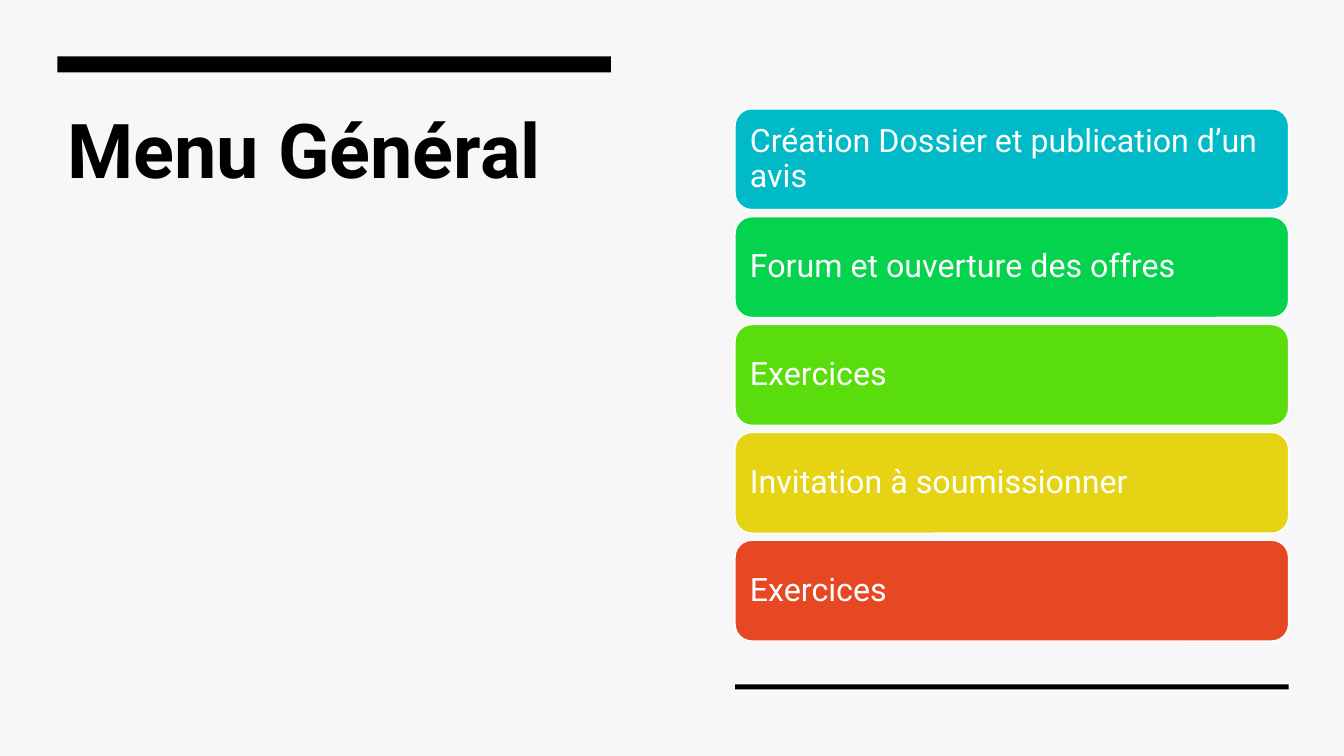
from dataclasses import dataclass

from pptx import Presentation
from pptx.dml.color import RGBColor
from pptx.enum.shapes import MSO_SHAPE
from pptx.enum.text import MSO_ANCHOR, PP_ALIGN
from pptx.shapes.autoshape import Shape
from pptx.slide import Slide
from pptx.text.text import TextFrame
from pptx.util import Inches, Pt

RECT = MSO_SHAPE.RECTANGLE
ROUNDED = MSO_SHAPE.ROUNDED_RECTANGLE
TOP = MSO_ANCHOR.TOP
MIDDLE = MSO_ANCHOR.MIDDLE
LEFT = PP_ALIGN.LEFT

FONT = "Roboto"
BLACK = RGBColor(0x00, 0x00, 0x00)
WHITE = RGBColor(0xFF, 0xFF, 0xFF)
LIGHT_GRAY = RGBColor(0xF7, 0xF7, 0xF7)
CYAN = RGBColor(0x00, 0xBA, 0xC8)
GREEN = RGBColor(0x06, 0xD3, 0x4D)
LIME = RGBColor(0x59, 0xDD, 0x0C)
YELLOW = RGBColor(0xE6, 0xD3, 0x13)
RED = RGBColor(0xE6, 0x48, 0x23)

TITLE_LEFT = 0.57
MENU_LEFT = 7.29
COLUMN_WIDTH = 5.49
MENU_TOP = 1.08
ITEM_HEIGHT = 1.0
ITEM_PITCH = 1.07


@dataclass(frozen=True)
class Bar:
    left: float
    top: float
    height: float


@dataclass(frozen=True)
class MenuItem:
    text: str
    color: RGBColor


BARS = [Bar(TITLE_LEFT, 0.56, 0.16), Bar(MENU_LEFT, 6.79, 0.05)]

MENU = [
    MenuItem("Création Dossier et publication d’un avis", CYAN),
    MenuItem("Forum et ouverture des offres", GREEN),
    MenuItem("Exercices", LIME),
    MenuItem("Invitation à soumissionner", YELLOW),
    MenuItem("Exercices", RED),
]


def set_text(tf: TextFrame, text: str, size: float, color: RGBColor,
             bold: bool, anchor: MSO_ANCHOR) -> None:
    tf.text = text
    tf.word_wrap = True
    tf.vertical_anchor = anchor
    p = tf.paragraphs[0]
    p.alignment = LEFT
    p.line_spacing = 0.9
    font = p.runs[0].font
    font.name = FONT
    font.size = Pt(size)
    font.bold = bold
    font.color.rgb = color


def add_block(s: Slide, kind: MSO_SHAPE, left: float, top: float,
              height: float, color: RGBColor) -> Shape:
    sp = s.shapes.add_shape(kind, Inches(left), Inches(top),
                            Inches(COLUMN_WIDTH), Inches(height))
    sp.shadow.inherit = False
    sp.fill.solid()
    sp.fill.fore_color.rgb = color
    sp.line.fill.background()
    return sp


def add_title(s: Slide, text: str) -> None:
    title = s.shapes.title
    title.left, title.top = Inches(TITLE_LEFT), Inches(1.07)
    title.width, title.height = Inches(COLUMN_WIDTH), Inches(2.68)
    set_text(title.text_frame, text, 54, BLACK, True, TOP)


def add_menu_item(s: Slide, item: MenuItem, top: float) -> None:
    sp = add_block(s, ROUNDED, MENU_LEFT, top, ITEM_HEIGHT, item.color)
    sp.line.color.rgb = WHITE
    sp.line.width = Pt(1)
    tf = sp.text_frame
    tf.margin_left = tf.margin_right = Inches(0.1)
    tf.margin_top = tf.margin_bottom = Inches(0.1)
    set_text(tf, item.text, 23, WHITE, False, MIDDLE)


def main() -> None:
    prs = Presentation()
    prs.slide_width, prs.slide_height = Inches(13.33), Inches(7.5)
    s = prs.slides.add_slide(prs.slide_layouts[5])
    s.background.fill.solid()
    s.background.fill.fore_color.rgb = LIGHT_GRAY

    add_title(s, "Menu Général")
    for bar in BARS:
        add_block(s, RECT, bar.left, bar.top, bar.height, BLACK)
    for i, item in enumerate(MENU):
        add_menu_item(s, item, MENU_TOP + i * ITEM_PITCH)

    prs.save("out.pptx")


if __name__ == "__main__":
    main()
